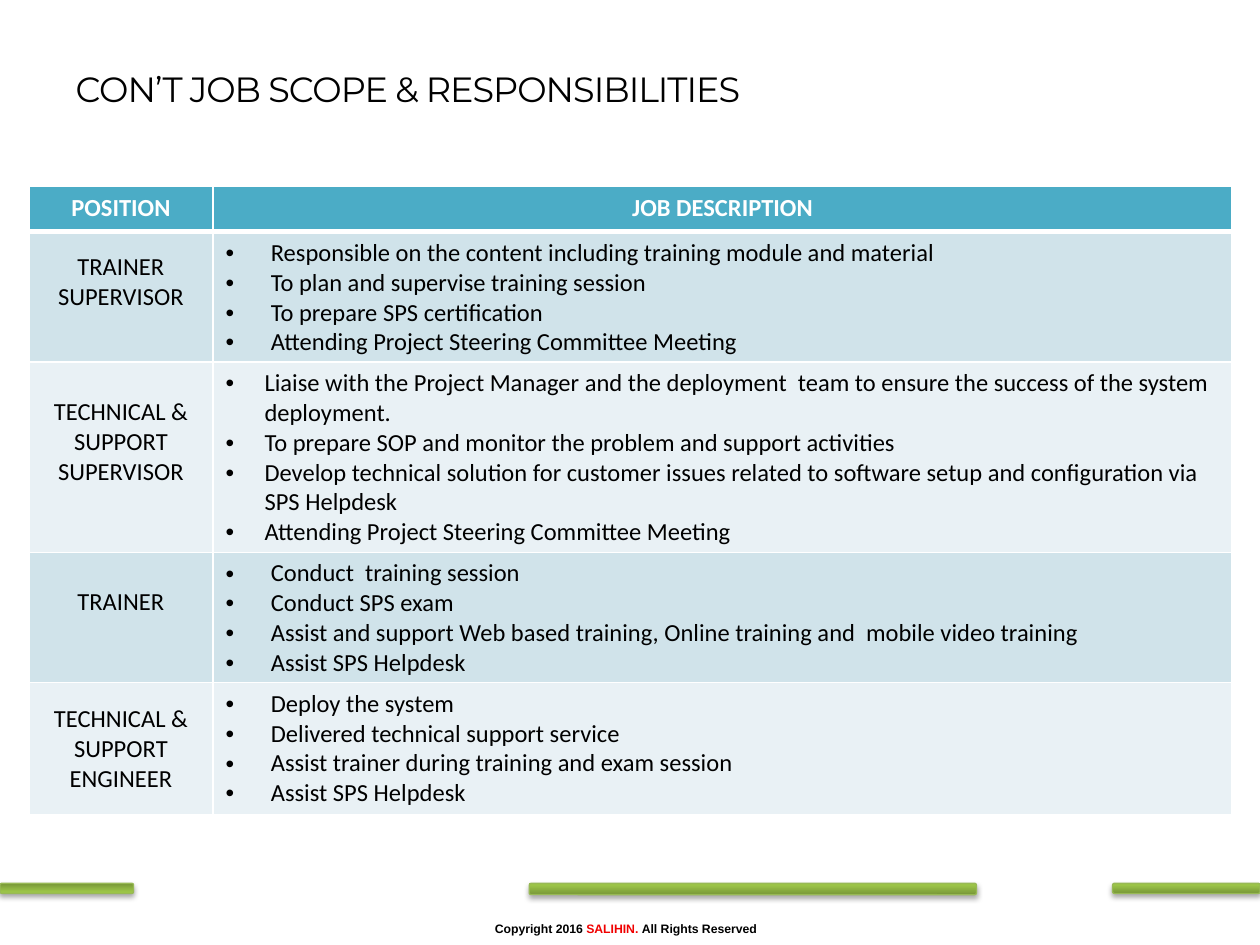
"""Build the job scope and responsibilities slide."""
import lxml.etree
import pptx
import pptx.dml.color
import pptx.enum.shapes
import pptx.enum.text
import pptx.oxml
import pptx.oxml.ns
import pptx.util
from pptx.util import Inches

RGBColor = pptx.dml.color.RGBColor
BLACK = RGBColor(0x00, 0x00, 0x00)
WHITE = RGBColor(0xFF, 0xFF, 0xFF)
RED = RGBColor(0xF0, 0x00, 0x00)
HEADER_BLUE = RGBColor(0x4B, 0xAC, 0xC6)
BAND_BLUES = (RGBColor(0xD0, 0xE3, 0xEA), RGBColor(0xE9, 0xF1, 0xF5))
BAR_EDGE = RGBColor(0x98, 0xB9, 0x55)
BAR_STOPS = (
    (0, RGBColor(0x77, 0x97, 0x37)),
    (80, RGBColor(0x9B, 0xC3, 0x48)),
    (100, RGBColor(0x9D, 0xC7, 0x46)),
)
CENTER = pptx.enum.text.PP_ALIGN.CENTER
LEFT = pptx.enum.text.PP_ALIGN.LEFT
MIDDLE = pptx.enum.text.MSO_ANCHOR.MIDDLE
NAMESPACE = pptx.oxml.ns.nsdecls("a")

HEADINGS = ("POSITION", "JOB DESCRIPTION")
COLUMN_WIDTHS = (1.46, 8.09)
HEADER_HEIGHT = 0.36
# Each job holds its position, row height, label bottom margin, text indent and duties.
JOBS = (
    ("TRAINER SUPERVISOR", 1.03, 0.29, 0.36, (
        "Responsible on the content including training module and material",
        "To plan and supervise training session",
        "To prepare SPS certification",
        "Attending Project Steering Committee Meeting",
    )),
    ("TECHNICAL & SUPPORT SUPERVISOR", 1.51, 0.29, 0.31, (
        "Liaise with the Project Manager and the deployment  team to ensure "
        "the success of the system deployment.",
        "To prepare SOP and monitor the problem and support activities",
        "Develop technical solution for customer issues related to software "
        "setup and configuration via SPS Helpdesk",
        "Attending Project Steering Committee Meeting",
    )),
    ("TRAINER", 1.03, 0.29, 0.36, (
        "Conduct  training session",
        "Conduct SPS exam",
        "Assist and support Web based training, Online training and  mobile video training",
        "Assist SPS Helpdesk",
    )),
    ("TECHNICAL & SUPPORT ENGINEER", 1.05, 0.05, 0.36, (
        "Deploy the system",
        "Delivered technical support service",
        "Assist trainer during training and exam session",
        "Assist SPS Helpdesk",
    )),
)


def add_text(paragraph, text, size=14, font="Calibri", color=BLACK, bold=False,
             align=None, spacing=None):
    """Add one formatted run to a paragraph."""
    run = paragraph.add_run()
    run.text = text
    run.font.size = pptx.util.Pt(size)
    run.font.name = font
    run.font.bold = bold
    run.font.color.rgb = color
    if align is not None:
        paragraph.alignment = align
    if spacing is not None:
        run.font._element.set("spc", str(round(spacing * 100)))


def add_bullet(paragraph, indent):
    """Give a paragraph a hanging round bullet."""
    properties = paragraph._p.get_or_add_pPr()
    properties.set("marL", str(Inches(indent)))
    properties.set("indent", str(-Inches(indent)))
    for xml in (f'<a:buFont {NAMESPACE} typeface="Arial"/>', f'<a:buChar {NAMESPACE} char="•"/>'):
        properties.append(pptx.oxml.parse_xml(xml))


def format_cell(cell, color, bottom_width=1):
    """Fill a cell and draw its white borders."""
    properties = cell._tc.get_or_add_tcPr()
    for side, width in (("L", 1), ("R", 1), ("T", 1), ("B", bottom_width)):
        properties.append(pptx.oxml.parse_xml(
            f'<a:ln{side} {NAMESPACE} w="{pptx.util.Pt(width)}"><a:solidFill>'
            f'<a:srgbClr val="{WHITE}"/></a:solidFill></a:ln{side}>'))
    cell.fill.solid()
    cell.fill.fore_color.rgb = color


def add_title(slide, left, top, width, height):
    """Place the slide title at the bottom of its box."""
    title = slide.shapes.title
    title.left, title.top = Inches(left), Inches(top)
    title.width, title.height = Inches(width), Inches(height)
    frame = title.text_frame
    frame.auto_size = pptx.enum.text.MSO_AUTO_SIZE.NONE
    frame.vertical_anchor = pptx.enum.text.MSO_ANCHOR.BOTTOM
    add_text(frame.paragraphs[0], "CON’T JOB SCOPE & RESPONSIBILITIES", size=20,
             font="Montserrat", align=LEFT, spacing=-0.6)


def add_jobs_table(slide, left, top):
    """Place the table of positions and their duties."""
    height = HEADER_HEIGHT + sum(job[1] for job in JOBS)
    table = slide.shapes.add_table(
        len(JOBS) + 1, len(HEADINGS), Inches(left), Inches(top),
        Inches(sum(COLUMN_WIDTHS)), Inches(height)).table
    for column, width in zip(table.columns, COLUMN_WIDTHS):
        column.width = Inches(width)
    table.rows[0].height = Inches(HEADER_HEIGHT)
    for cell, heading in zip(table.rows[0].cells, HEADINGS):
        format_cell(cell, HEADER_BLUE, bottom_width=3)
        add_text(cell.text_frame.paragraphs[0], heading, color=WHITE, bold=True, align=CENTER)
    for index, (position, row_height, bottom_margin, indent, duties) in enumerate(JOBS):
        row = table.rows[index + 1]
        row.height = Inches(row_height)
        label, description = row.cells
        for cell in (label, description):
            format_cell(cell, BAND_BLUES[index % 2])
        label.vertical_anchor = MIDDLE
        label.margin_bottom = Inches(bottom_margin)
        add_text(label.text_frame.paragraphs[0], position, align=CENTER)
        frame = description.text_frame
        for number, duty in enumerate(duties):
            paragraph = frame.add_paragraph() if number else frame.paragraphs[0]
            add_bullet(paragraph, indent)
            add_text(paragraph, duty)


def add_bar(slide, left, top, width, height, flipped):
    """Place one green bar with a gradient and a soft shadow."""
    bar = slide.shapes.add_shape(
        pptx.enum.shapes.MSO_SHAPE.ROUNDED_RECTANGLE,
        Inches(left), Inches(top), Inches(width), Inches(height))
    bar.rotation = 180
    bar.line.color.rgb = BAR_EDGE
    bar.line.width = pptx.util.Pt(0.75)
    bar.shadow.inherit = False
    properties = bar._element.spPr
    if flipped:
        properties.find(pptx.oxml.ns.qn("a:xfrm")).set("flipV", "1")
    stops = "".join(f'<a:gs pos="{position * 1000}"><a:srgbClr val="{color}"/></a:gs>'
                    for position, color in BAR_STOPS)
    properties.find(pptx.oxml.ns.qn("a:prstGeom")).addnext(pptx.oxml.parse_xml(
        f'<a:gradFill {NAMESPACE} rotWithShape="1"><a:gsLst>{stops}</a:gsLst>'
        '<a:lin ang="16200000" scaled="0"/></a:gradFill>'))
    properties.find(pptx.oxml.ns.qn("a:effectLst")).append(pptx.oxml.parse_xml(
        f'<a:outerShdw {NAMESPACE} blurRad="{pptx.util.Pt(3.1)}" dist="{pptx.util.Pt(1.8)}" '
        f'dir="5400000" rotWithShape="0"><a:srgbClr val="{BLACK}"><a:alpha val="35000"/>'
        '</a:srgbClr></a:outerShdw>'))


def add_footer(slide, left, top, width, height):
    """Place the copyright line."""
    frame = slide.shapes.add_textbox(
        Inches(left), Inches(top), Inches(width), Inches(height)).text_frame
    frame.word_wrap = True
    for text, color in (("Copyright 2016 ", BLACK), ("SALIHIN. ", RED),
                        ("All Rights Reserved", BLACK)):
        add_text(frame.paragraphs[0], text, size=7, font="Arial", color=color, bold=True)


def main():
    """Build and save the presentation."""
    presentation = pptx.Presentation()
    presentation.slide_width, presentation.slide_height = Inches(10), Inches(7.5)
    slide = presentation.slides.add_slide(presentation.slide_layouts[5])
    add_footer(slide, 3.83, 7.26, 4.2, 0.22)
    for left, width, height, flipped in ((0, 1.06, 0.08, False), (8.83, 1.17, 0.08, True),
                                         (4.2, 3.55, 0.09, True)):
        add_bar(slide, left, 7.01, width, height, flipped)
    add_title(slide, 0.5, 0, 9.33, 0.92)
    add_jobs_table(slide, 0.23, 1.48)
    presentation.save("out.pptx")


if __name__ == "__main__":
    main()
